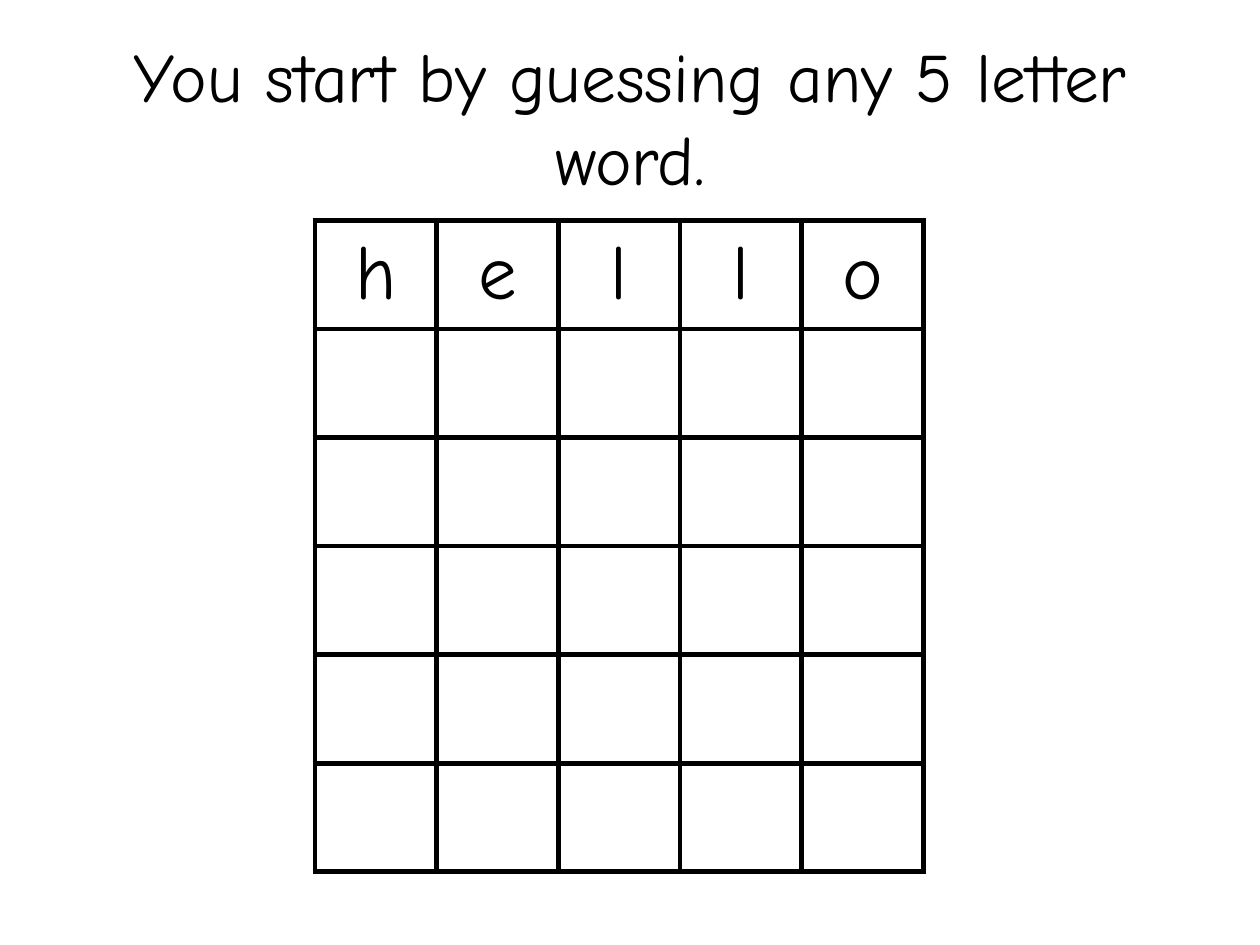
from lxml import etree
from pptx import Presentation
from pptx.dml.color import RGBColor
from pptx.enum.text import MSO_ANCHOR, PP_ALIGN
from pptx.oxml.ns import qn
from pptx.util import Inches, Pt

BLACK = RGBColor(0x00, 0x00, 0x00)
FONT = "Comic Neue"
CENTER = PP_ALIGN.CENTER
MIDDLE = MSO_ANCHOR.MIDDLE
GUESS = "hello"
ROWS = 6
BORDER = Pt(3)


def format_text(paragraph, size):
    paragraph.alignment = CENTER
    for run in paragraph.runs:
        run.font.name = FONT
        run.font.size = Pt(size)
        run.font.color.rgb = BLACK


def add_borders(cell):
    properties = cell._tc.get_or_add_tcPr()
    for position, side in enumerate(("a:lnL", "a:lnR", "a:lnT", "a:lnB")):
        line = etree.Element(qn(side), w=str(BORDER))
        fill = etree.SubElement(line, qn("a:solidFill"))
        etree.SubElement(fill, qn("a:srgbClr"), val=str(BLACK))
        properties.insert(position, line)


prs = Presentation()
prs.slide_width = Inches(10)
prs.slide_height = Inches(7.5)
slide = prs.slides.add_slide(prs.slide_layouts[6])

# Instruction
instruction = slide.shapes.add_textbox(Inches(0.5), Inches(0.3), Inches(9), Inches(1.25))
instruction.text_frame.word_wrap = True
instruction.text_frame.vertical_anchor = MIDDLE
instruction.text_frame.text = "You start by guessing any 5 letter word."
format_text(instruction.text_frame.paragraphs[0], 39.6)

# Guess grid: one row per guess, one column per letter
grid = slide.shapes.add_table(
    ROWS, len(GUESS), Inches(2.5), Inches(1.75), Inches(4.83), Inches(5.17)
).table
grid.first_row = False
grid.horz_banding = False
for cell in grid.iter_cells():
    cell.fill.background()
    cell.vertical_anchor = MIDDLE
    add_borders(cell)

# First guess
for column, letter in enumerate(GUESS):
    cell = grid.cell(0, column)
    cell.text_frame.text = letter
    format_text(cell.text_frame.paragraphs[0], 44)

prs.save("out.pptx")
